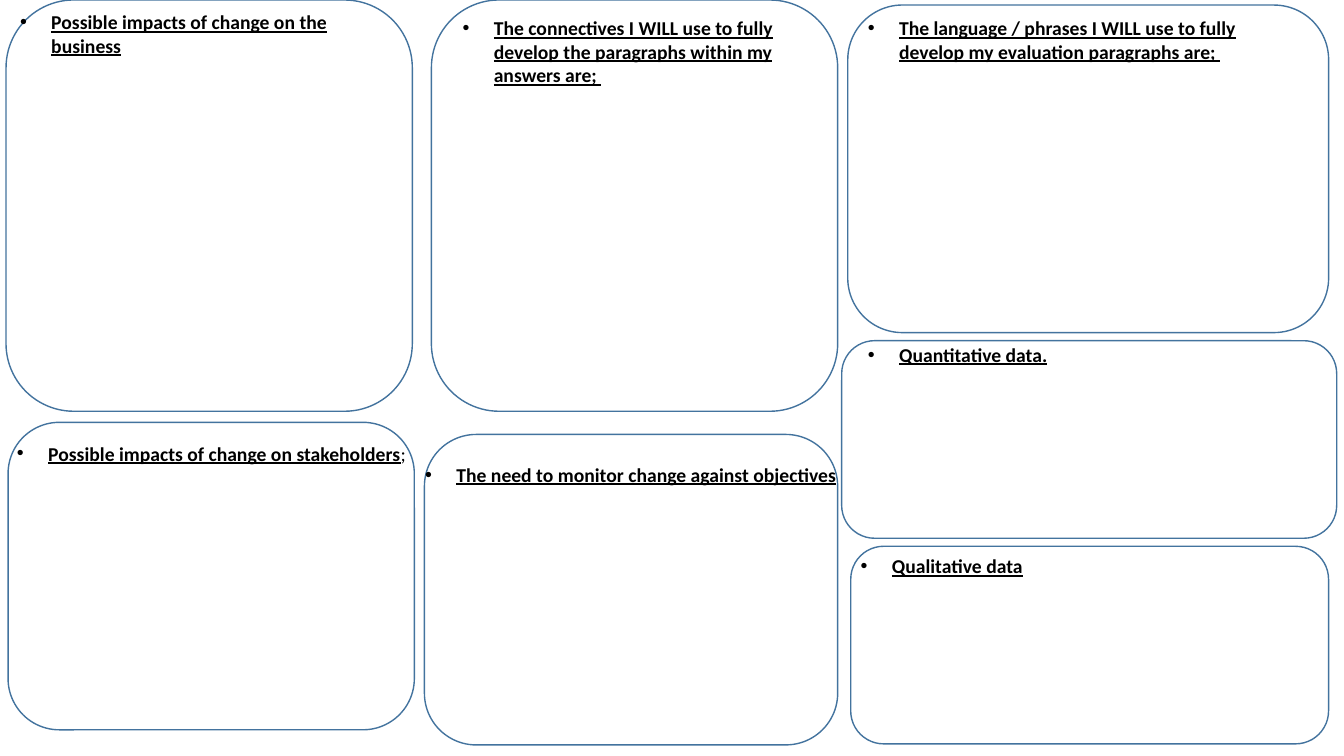
import pptx
import pptx.util
import pptx.dml.color
import pptx.enum.shapes
import pptx.oxml.ns
from dataclasses import dataclass
from lxml import etree


@dataclass(frozen=True)
class Theme:
    font: str = "Calibri"
    size: float = 14
    ink: str = "000000"
    edge: str = "43739E"
    weight: float = 1
    indent: float = 0.31


class Board:
    def __init__(self, deck, theme):
        self.deck = deck
        self.theme = theme
        self.slide = deck.slides.add_slide(deck.slide_layouts[6])

    def place(self, left, top, width, height):
        wide, high = self.deck.slide_width, self.deck.slide_height
        return [round(share * full / 100) for share, full in
                zip((left, top, width, height), (wide, high, wide, high))]

    def panel(self, area):
        kind = pptx.enum.shapes.MSO_SHAPE.ROUNDED_RECTANGLE
        shape = self.slide.shapes.add_shape(kind, *self.place(*area))
        shape.shadow.inherit = False
        shape.fill.background()
        shape.line.color.rgb = pptx.dml.color.RGBColor.from_string(self.theme.edge)
        shape.line.width = pptx.util.Pt(self.theme.weight)

    def bullet(self, para):
        props = para._p.get_or_add_pPr()
        indent = pptx.util.Inches(self.theme.indent)
        props.set("marL", str(indent))
        props.set("indent", str(-indent))
        face = etree.SubElement(props, pptx.oxml.ns.qn("a:buFont"))
        face.set("typeface", "Arial")
        mark = etree.SubElement(props, pptx.oxml.ns.qn("a:buChar"))
        mark.set("char", "•")

    def heading(self, area, text, tail):
        frame = self.slide.shapes.add_textbox(*self.place(*area)).text_frame
        frame.word_wrap = True
        para = frame.paragraphs[0]
        self.bullet(para)
        para.font.name = self.theme.font
        para.font.size = pptx.util.Pt(self.theme.size)
        para.font.color.rgb = pptx.dml.color.RGBColor.from_string(self.theme.ink)
        for words, strong in ((text, True), (tail, False)):
            if words:
                run = para.add_run()
                run.text = words
                run.font.name = self.theme.font
                run.font.size = pptx.util.Pt(self.theme.size)
                run.font.color.rgb = pptx.dml.color.RGBColor.from_string(self.theme.ink)
                run.font.bold = strong
                run.font.underline = strong


TOPICS = [
    ((0.45, 0, 30.23, 54.4), (0.75, 0.67, 29.55, 7.6),
     "Possible impacts of change on the business", ""),
    ((0.6, 55.87, 30.23, 40.67), (0.53, 57.73, 30.68, 4.53),
     "Possible impacts of change on stakeholders", ";"),
    ((32.1, 0, 30.23, 54.4), (33.68, 1.47, 28.8, 13.87),
     "The connectives I WILL use to fully develop the paragraphs within my answers are; ", ""),
    ((31.58, 57.47, 30.75, 41.07), (30.9, 60.53, 32.33, 7.6),
     "The need to monitor change against objectives", ""),
    ((63.08, 0.67, 35.78, 43.33), (63.83, 1.47, 33.23, 10.8),
     "The language / phrases I WILL use to fully develop my evaluation paragraphs are; ", ""),
    ((62.63, 45.07, 36.83, 26.13), (63.83, 44.67, 31.8, 4.53),
     "Quantitative data.", ""),
    ((63.3, 72.27, 35.55, 26.13), (63.3, 72.67, 28.95, 7.6),
     "Qualitative data", ""),
]


def main():
    deck = pptx.Presentation()
    deck.slide_width = pptx.util.Inches(13.33)
    deck.slide_height = pptx.util.Inches(7.5)
    board = Board(deck, Theme())
    for frame, label, text, tail in TOPICS:
        board.panel(frame)
        board.heading(label, text, tail)
    deck.save("out.pptx")


if __name__ == "__main__":
    main()
